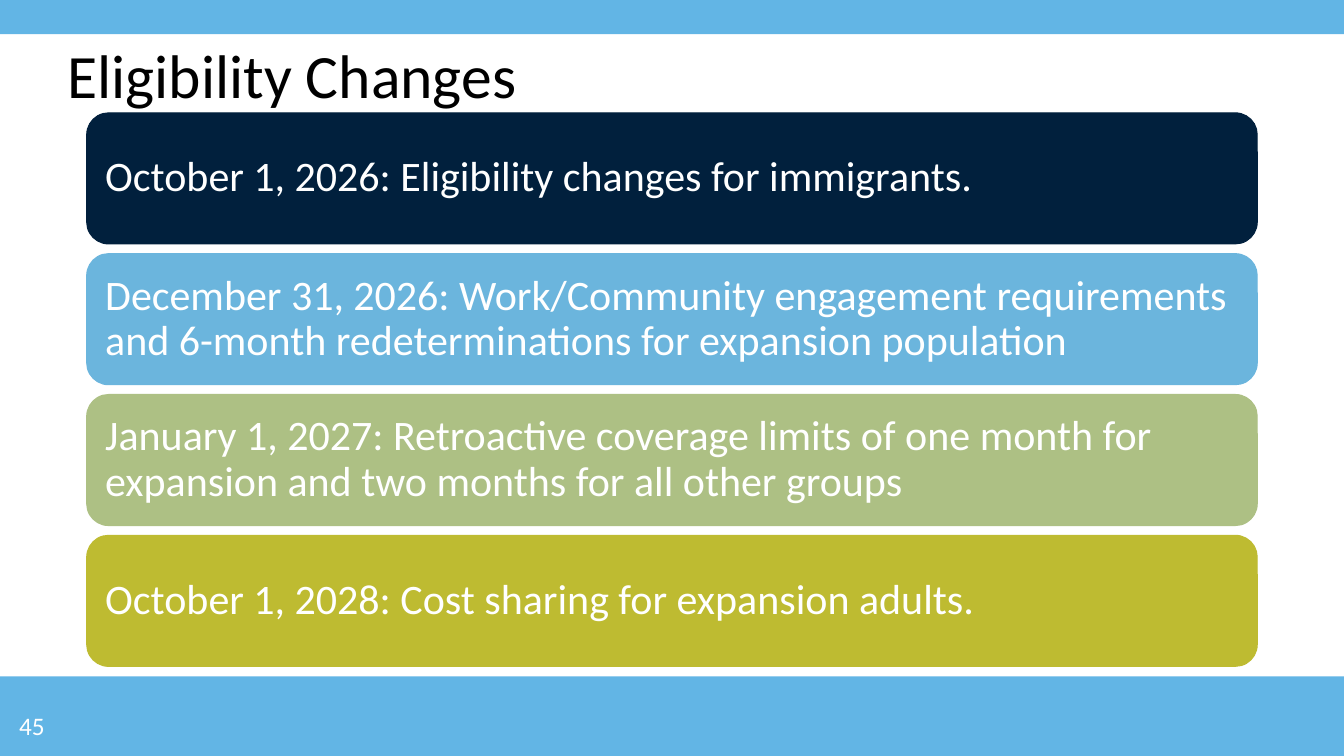
from dataclasses import dataclass

from pptx import Presentation
from pptx.dml.color import RGBColor
from pptx.enum.shapes import MSO_SHAPE
from pptx.enum.text import MSO_ANCHOR, PP_ALIGN
from pptx.shapes.autoshape import Shape
from pptx.slide import Slide
from pptx.util import Inches, Pt


@dataclass(frozen=True)
class Theme:
    font: str = "Calibri"
    band: str = "62B5E5"
    dark: str = "000000"
    light: str = "FFFFFF"
    title_size: int = 44
    card_size: int = 30
    number_size: int = 18


@dataclass(frozen=True)
class Area:
    left: float
    top: float
    width: float
    height: float


@dataclass(frozen=True)
class Milestone:
    text: str
    color: str


THEME = Theme()
PAGE_WIDTH, PAGE_HEIGHT = 13.33, 7.5
BANDS = [Area(0, 0, PAGE_WIDTH, 0.34), Area(0, 6.71, PAGE_WIDTH, 0.79)]
FIRST_CARD = Area(0.86, 1.12, 11.61, 1.3)
CARD_STEP = 1.397
CARD_INSET = 0.12
MILESTONES = [
    Milestone("October 1, 2026: Eligibility changes for immigrants.", "01203D"),
    Milestone("December 31, 2026: Work/Community engagement requirements "
              "and 6-month redeterminations for expansion population", "6BB5DD"),
    Milestone("January 1, 2027: Retroactive coverage limits of one month for "
              "expansion and two months for all other groups", "ADC084"),
    Milestone("October 1, 2028: Cost sharing for expansion adults.", "BEBB31"),
]


def place(area: Area) -> tuple:
    return (Inches(area.left), Inches(area.top),
            Inches(area.width), Inches(area.height))


def write(box: Shape, text: str, size: int, color: str,
          anchor: MSO_ANCHOR, spacing: float = 1.0) -> None:
    frame = box.text_frame
    frame.word_wrap = True
    frame.vertical_anchor = anchor
    para = frame.paragraphs[0]
    para.text = text
    para.alignment = PP_ALIGN.LEFT
    para.line_spacing = spacing
    para.font.name = THEME.font
    para.font.size = Pt(size)
    para.font.color.rgb = RGBColor.from_string(color)


def add_block(page: Slide, kind: MSO_SHAPE, area: Area, color: str) -> Shape:
    block = page.shapes.add_shape(kind, *place(area))
    block.shadow.inherit = False
    block.fill.solid()
    block.fill.fore_color.rgb = RGBColor.from_string(color)
    block.line.fill.background()
    return block


def add_card(page: Slide, area: Area, milestone: Milestone) -> None:
    card = add_block(page, MSO_SHAPE.ROUNDED_RECTANGLE, area, milestone.color)
    card.line.color.rgb = RGBColor.from_string(milestone.color)
    card.line.width = Pt(0.75)
    frame = card.text_frame
    frame.margin_left = frame.margin_right = Inches(CARD_INSET)
    frame.margin_top = frame.margin_bottom = Inches(CARD_INSET)
    write(card, milestone.text, THEME.card_size, THEME.light,
          MSO_ANCHOR.MIDDLE, 0.9)


def main() -> None:
    deck = Presentation()
    deck.slide_width, deck.slide_height = Inches(PAGE_WIDTH), Inches(PAGE_HEIGHT)
    page = deck.slides.add_slide(deck.slide_layouts[6])

    # Top and bottom bands
    for band in BANDS:
        add_block(page, MSO_SHAPE.RECTANGLE, band, THEME.band)

    # Milestone cards, evenly stacked
    for index, milestone in enumerate(MILESTONES):
        top = FIRST_CARD.top + index * CARD_STEP
        area = Area(FIRST_CARD.left, top, FIRST_CARD.width, FIRST_CARD.height)
        add_card(page, area, milestone)

    # Title
    title = page.shapes.add_textbox(*place(Area(0.57, -0.29, 11.5, 1.45)))
    write(title, "Eligibility Changes", THEME.title_size, THEME.dark,
          MSO_ANCHOR.BOTTOM, 0.9)

    # Page number
    number = page.shapes.add_textbox(*place(Area(0.09, 7, 3.11, 0.4)))
    write(number, "45", THEME.number_size, THEME.light, MSO_ANCHOR.MIDDLE)

    deck.save("out.pptx")


if __name__ == "__main__":
    main()
